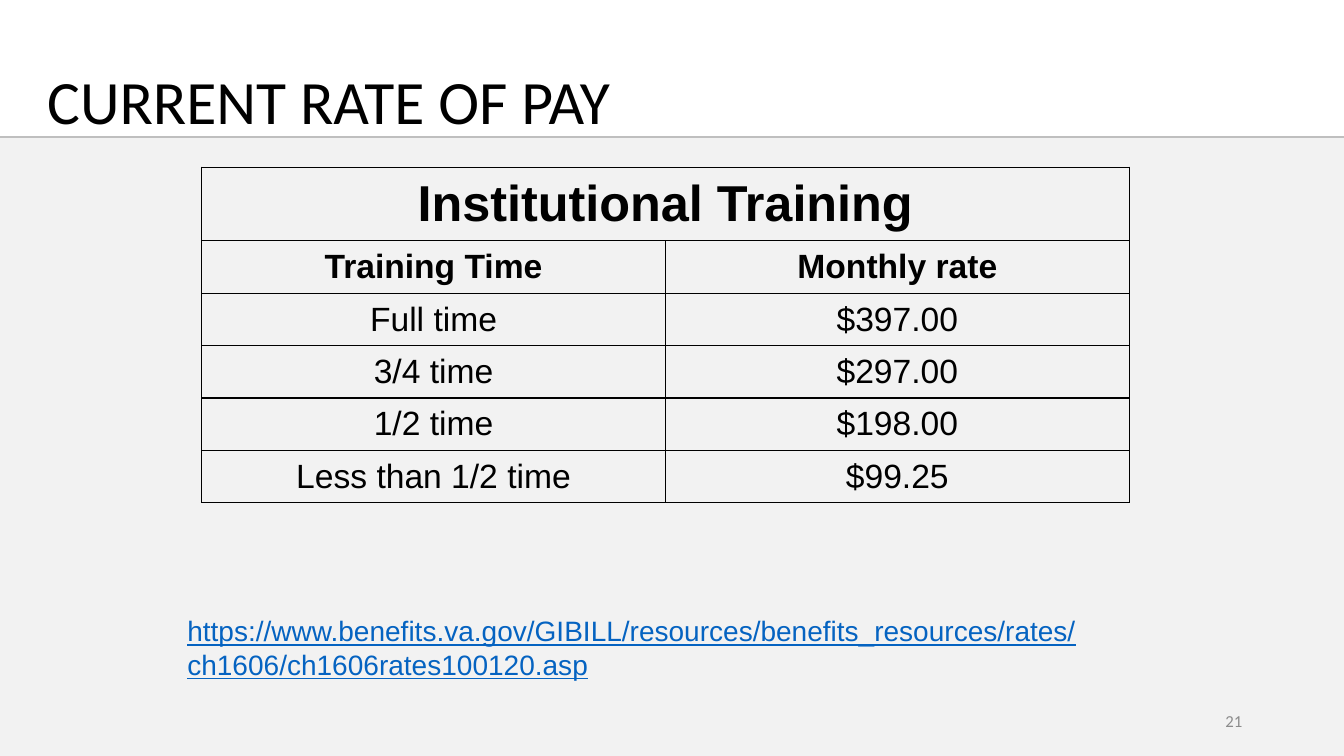
from dataclasses import dataclass

from lxml.etree import SubElement
from pptx import Presentation
from pptx.dml.color import RGBColor
from pptx.enum.shapes import MSO_CONNECTOR, MSO_SHAPE
from pptx.enum.text import MSO_ANCHOR as Anchor, PP_ALIGN as Align
from pptx.oxml.ns import qn
from pptx.util import Inches, Pt

BLACK = RGBColor(0, 0, 0)
PALE = RGBColor(0xF2, 0xF2, 0xF2)
RULE = RGBColor(0xBF, 0xBF, 0xBF)
GREY = RGBColor(0x8C, 0x8C, 0x8C)
LINK = RGBColor(0x05, 0x63, 0xC1)

# Square grid: 133.3 columns by 75 rows
UNIT = Inches(0.1)
COLS, ROWS = 133.3, 75
HEADER_ROWS = 13.6

CELL_MARGIN = 0.4
TABLE_LEFT, TABLE_TOP, TABLE_COLS = 20, 16.6, 92


@dataclass
class Label:
    text: str
    col: float
    row: float
    cols: float
    rows: float
    font: str
    size: int
    color: RGBColor
    align: Align = Align.LEFT
    anchor: Anchor = Anchor.MIDDLE
    underline: bool = False
    spacing: float = 1.0


@dataclass
class RateRow:
    cells: tuple[str, ...]
    rows: float = 5.2
    size: int = 24
    bold: bool = False


LABELS = [
    Label("CURRENT RATE OF PAY", 3.7, 7.4, 70, 5.9, "Calibri", 44, BLACK, spacing=0.9),
    Label("21", 94.2, 69.5, 30, 4, "Calibri", 12, GREY, Align.RIGHT),
    Label("https://www.benefits.va.gov/GIBILL/resources/benefits_resources/rates/"
          "ch1606/ch1606rates100120.asp",
          17.6, 60.4, 97.3, 10.8, "Arial", 20, LINK, anchor=Anchor.TOP, underline=True),
]

RATES = [
    RateRow(("Institutional Training",), 7.3, 36, True),
    RateRow(("Training Time", "Monthly rate"), bold=True),
    RateRow(("Full time", "$397.00")),
    RateRow(("3/4 time", "$297.00")),
    RateRow(("1/2 time", "$198.00")),
    RateRow(("Less than 1/2 time", "$99.25")),
]


def grid(n: float) -> int:
    """Length of n grid units in EMU."""
    return round(n * UNIT)


def add_background(s) -> None:
    panel = s.shapes.add_shape(MSO_SHAPE.RECTANGLE, 0, grid(HEADER_ROWS + 0.1),
                               grid(COLS), grid(ROWS - HEADER_ROWS - 0.1))
    panel.shadow.inherit = False
    panel.fill.solid()
    panel.fill.fore_color.rgb = PALE
    panel.line.fill.background()

    rule = s.shapes.add_connector(MSO_CONNECTOR.STRAIGHT, 0, grid(HEADER_ROWS),
                                  grid(COLS), grid(HEADER_ROWS))
    rule.line.color.rgb = RULE
    rule.line.width = Pt(1.5)
    SubElement(rule.element.spPr, qn("a:effectLst"))


def add_label(s, label: Label) -> None:
    sp = s.shapes.add_textbox(grid(label.col), grid(label.row),
                              grid(label.cols), grid(label.rows))
    tf = sp.text_frame
    tf.word_wrap = True
    tf.vertical_anchor = label.anchor
    p = tf.paragraphs[0]
    p.text = label.text
    p.alignment = label.align
    p.line_spacing = label.spacing
    p.font.name = label.font
    p.font.size = Pt(label.size)
    p.font.color.rgb = label.color
    p.font.underline = label.underline


def add_borders(cell) -> None:
    tc_pr = cell._tc.get_or_add_tcPr()
    for side in ("lnL", "lnR", "lnT", "lnB"):
        ln = SubElement(tc_pr, qn(f"a:{side}"), w=str(Pt(1)))
        fill = SubElement(ln, qn("a:solidFill"))
        SubElement(fill, qn("a:srgbClr"), val=str(BLACK))


def style_cell(cell, rate: RateRow) -> None:
    add_borders(cell)
    cell.fill.background()
    cell.vertical_anchor = Anchor.MIDDLE
    cell.margin_left = cell.margin_right = grid(CELL_MARGIN)
    cell.margin_top = cell.margin_bottom = grid(CELL_MARGIN)
    p = cell.text_frame.paragraphs[0]
    p.alignment = Align.CENTER
    p.font.name = "Arial"
    p.font.size = Pt(rate.size)
    p.font.bold = rate.bold
    p.font.color.rgb = BLACK


def add_rates(s, rates: list[RateRow]) -> None:
    height = sum(rate.rows for rate in rates)
    table = s.shapes.add_table(len(rates), 2, grid(TABLE_LEFT), grid(TABLE_TOP),
                               grid(TABLE_COLS), grid(height)).table
    table.first_row = table.horz_banding = False
    for row, rate in zip(table.rows, rates):
        row.height = grid(rate.rows)
        for cell, text in zip(row.cells, rate.cells):
            cell.text = text
        for cell in row.cells:
            style_cell(cell, rate)
    table.cell(0, 0).merge(table.cell(0, 1))


def main() -> None:
    prs = Presentation()
    prs.slide_width, prs.slide_height = grid(COLS), grid(ROWS)
    s = prs.slides.add_slide(prs.slide_layouts[6])
    add_background(s)
    add_rates(s, RATES)
    for label in LABELS:
        add_label(s, label)
    prs.save("out.pptx")


if __name__ == "__main__":
    main()
